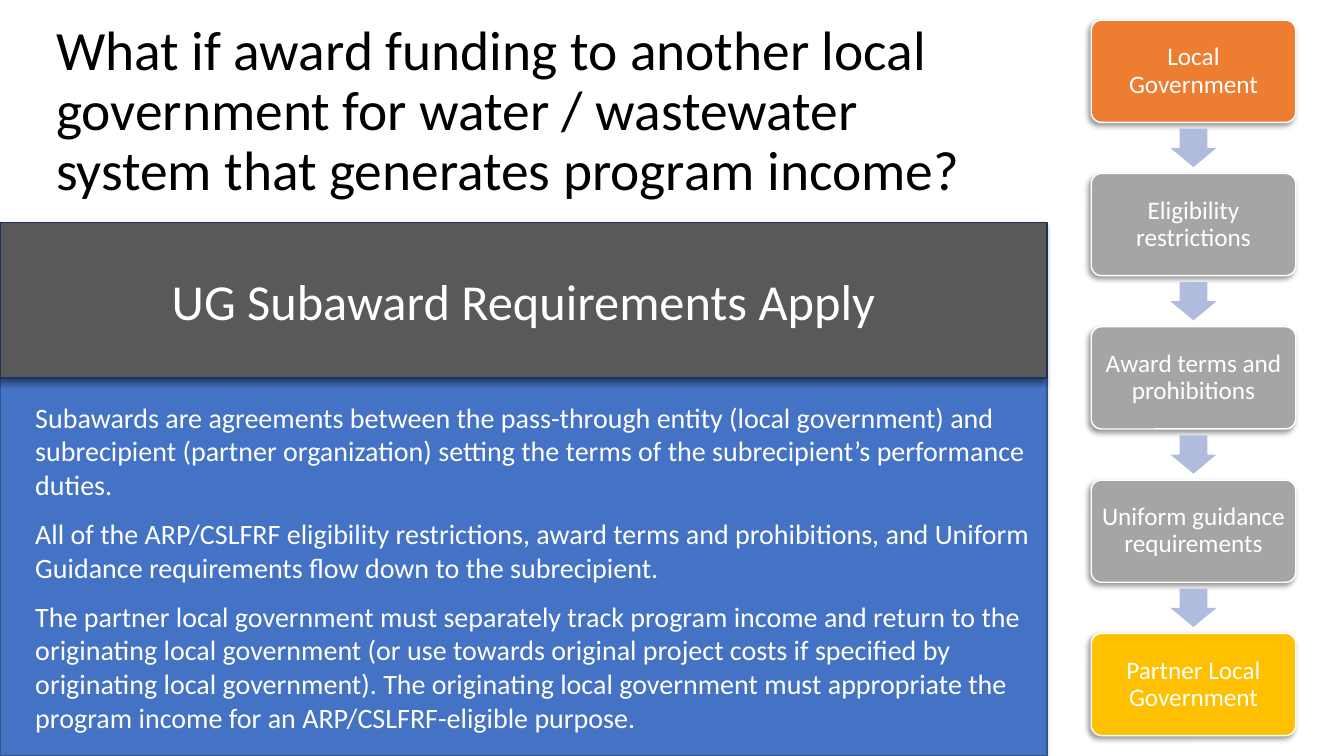
from lxml import etree
from pptx import Presentation
from pptx.dml.color import RGBColor
from pptx.enum import shapes, text
from pptx.oxml import ns
from pptx.util import Pt

FONT = "Calibri"
BLACK = RGBColor(0x00, 0x00, 0x00)
WHITE = RGBColor(0xFF, 0xFF, 0xFF)
BLUE = RGBColor(0x44, 0x72, 0xC4)
BLUE_EDGE = RGBColor(0x32, 0x54, 0x91)
CHARCOAL = RGBColor(0x59, 0x59, 0x59)
NAVY = RGBColor(0x1E, 0x32, 0x56)
ORANGE = RGBColor(0xED, 0x7D, 0x31)
GRAY = RGBColor(0xA5, 0xA5, 0xA5)
GOLD = RGBColor(0xFF, 0xC0, 0x00)
PALE_BLUE = RGBColor(0xB0, 0xBC, 0xDE)

prs = Presentation()
prs.slide_width, prs.slide_height = Pt(960), Pt(540)
slide = prs.slides.add_slide(prs.slide_layouts[6])


def add_panel(kind, left, top, width, height, fill, edge):
    """Add a filled, outlined shape with a soft shadow."""
    panel = slide.shapes.add_shape(kind, Pt(left), Pt(top), Pt(width), Pt(height))
    panel.fill.solid()
    panel.fill.fore_color.rgb = fill
    panel.line.color.rgb = edge
    panel.line.width = Pt(1)
    panel.shadow.inherit = False
    effects = panel.element.spPr.find(ns.qn("a:effectLst"))
    shadow = etree.SubElement(effects, ns.qn("a:outerShdw"), blurRad=str(Pt(4)),
                              dist=str(Pt(3)), dir=str(135 * 60000), rotWithShape="0")
    color = etree.SubElement(shadow, ns.qn("a:srgbClr"), val="000000")
    etree.SubElement(color, ns.qn("a:alpha"), val="40000")
    return panel


def write(shape, paragraphs, size, color, align, spacing=1.0, gap=0):
    """Fill a shape with middle-anchored paragraphs, a gap between them."""
    frame = shape.text_frame
    frame.word_wrap = True
    frame.vertical_anchor = text.MSO_ANCHOR.MIDDLE
    for i, words in enumerate(paragraphs):
        para = frame.add_paragraph() if i else frame.paragraphs[0]
        para.alignment = align
        para.line_spacing = spacing
        para.space_before = Pt(gap if i else 0)
        run = para.add_run()
        run.text = words
        run.font.name = FONT
        run.font.size = Pt(size)
        run.font.color.rgb = color
    return frame


# Title
title = slide.shapes.add_textbox(Pt(33), Pt(28), Pt(682.5), Pt(104.5))
write(title, ["What if award funding to another local government for water / "
              "wastewater system that generates program income?"],
      39.6, BLACK, text.PP_ALIGN.LEFT, spacing=0.9)

# Subaward explanation
explanation = add_panel(shapes.MSO_SHAPE.RECTANGLE, 0, 270, 748, 270, BLUE, BLUE_EDGE)
explanation_frame = write(explanation, [
    "Subawards are agreements between the pass-through entity (local government) "
    "and subrecipient (partner organization) setting the terms of the "
    "subrecipient’s performance duties.",
    "All of the ARP/CSLFRF eligibility restrictions, award terms and prohibitions, "
    "and Uniform Guidance requirements flow down to the subrecipient.",
    "The partner local government must separately track program income and return "
    "to the originating local government (or use towards original project costs if "
    "specified by originating local government). The originating local government "
    "must appropriate the program income for an ARP/CSLFRF-eligible purpose.",
], 20, WHITE, text.PP_ALIGN.LEFT, gap=11)
explanation_frame.margin_left = Pt(25.2)

# Flow from local government to partner
STEPS = [
    ("Local Government", ORANGE),
    ("Eligibility restrictions", GRAY),
    ("Award terms and prohibitions", GRAY),
    ("Uniform guidance requirements", GRAY),
    ("Partner Local Government", GOLD),
]
STEP_LEFT, STEP_TOP, STEP_WIDTH, STEP_HEIGHT, STEP_PITCH = 779.5, 14.4, 146, 73, 109.5
ARROW_WIDTH, ARROW_HEIGHT = 33, 27.4
for i, (label, fill) in enumerate(STEPS):
    top = STEP_TOP + i * STEP_PITCH
    step = add_panel(shapes.MSO_SHAPE.ROUNDED_RECTANGLE, STEP_LEFT, top,
                     STEP_WIDTH, STEP_HEIGHT, fill, WHITE)
    step.adjustments[0] = 0.1
    step_frame = write(step, [label], 18, WHITE, text.PP_ALIGN.CENTER, spacing=0.9)
    step_frame.margin_left = step_frame.margin_right = Pt(4.5)
    if i == len(STEPS) - 1:
        break
    # Arrow centred in the gap below the step
    arrow = slide.shapes.add_shape(
        shapes.MSO_SHAPE.DOWN_ARROW,
        Pt(STEP_LEFT + (STEP_WIDTH - ARROW_WIDTH) / 2),
        Pt(top + (STEP_HEIGHT + STEP_PITCH - ARROW_HEIGHT) / 2),
        Pt(ARROW_WIDTH), Pt(ARROW_HEIGHT))
    arrow.adjustments[0], arrow.adjustments[1] = 0.6, 0.5
    arrow.fill.solid()
    arrow.fill.fore_color.rgb = PALE_BLUE
    arrow.line.fill.background()
    arrow.shadow.inherit = False

# Banner, its shadow falling on the explanation
banner = add_panel(shapes.MSO_SHAPE.RECTANGLE, 0, 159, 748, 111, CHARCOAL, NAVY)
write(banner, ["UG Subaward Requirements Apply"], 36, WHITE, text.PP_ALIGN.CENTER)

prs.save("out.pptx")
